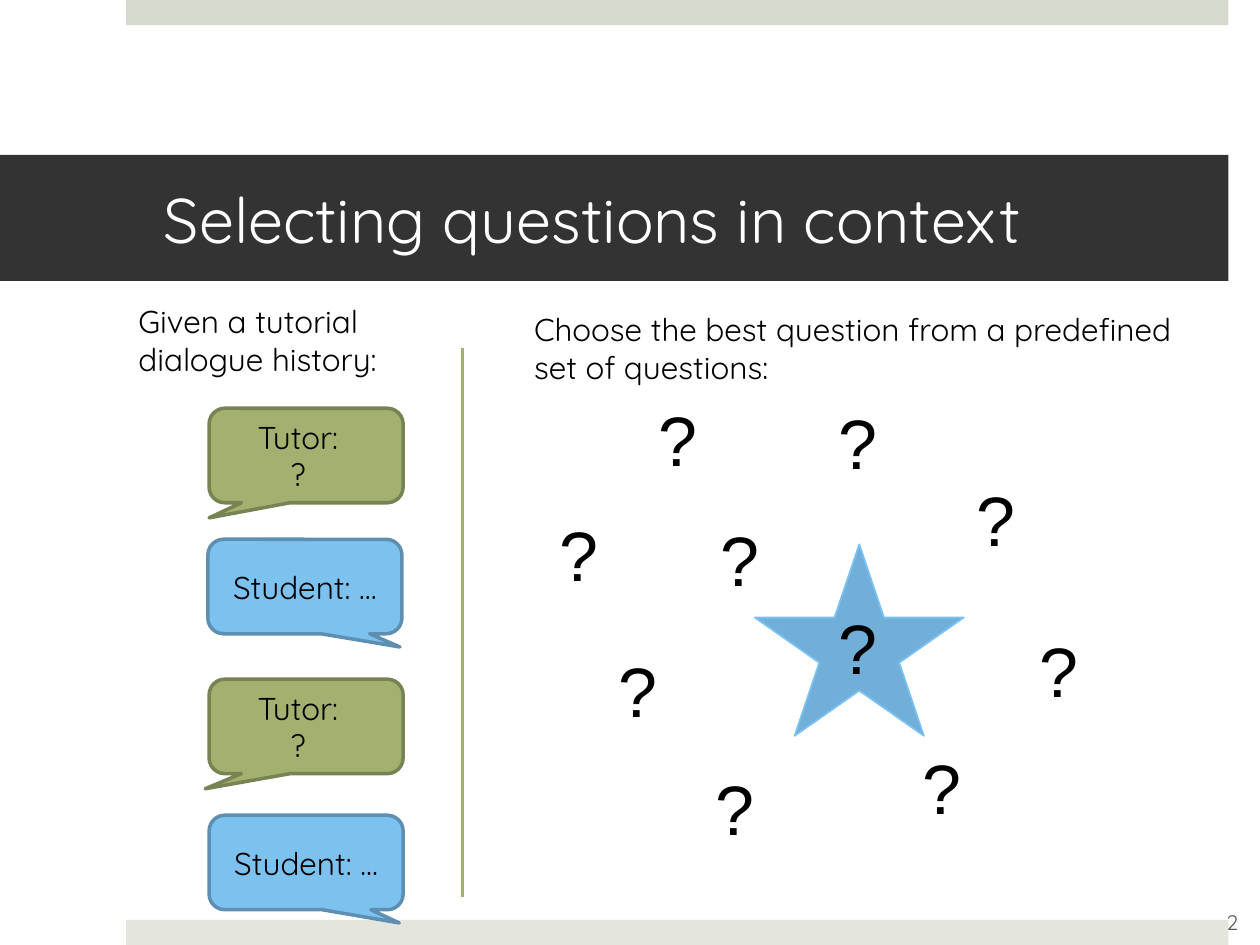
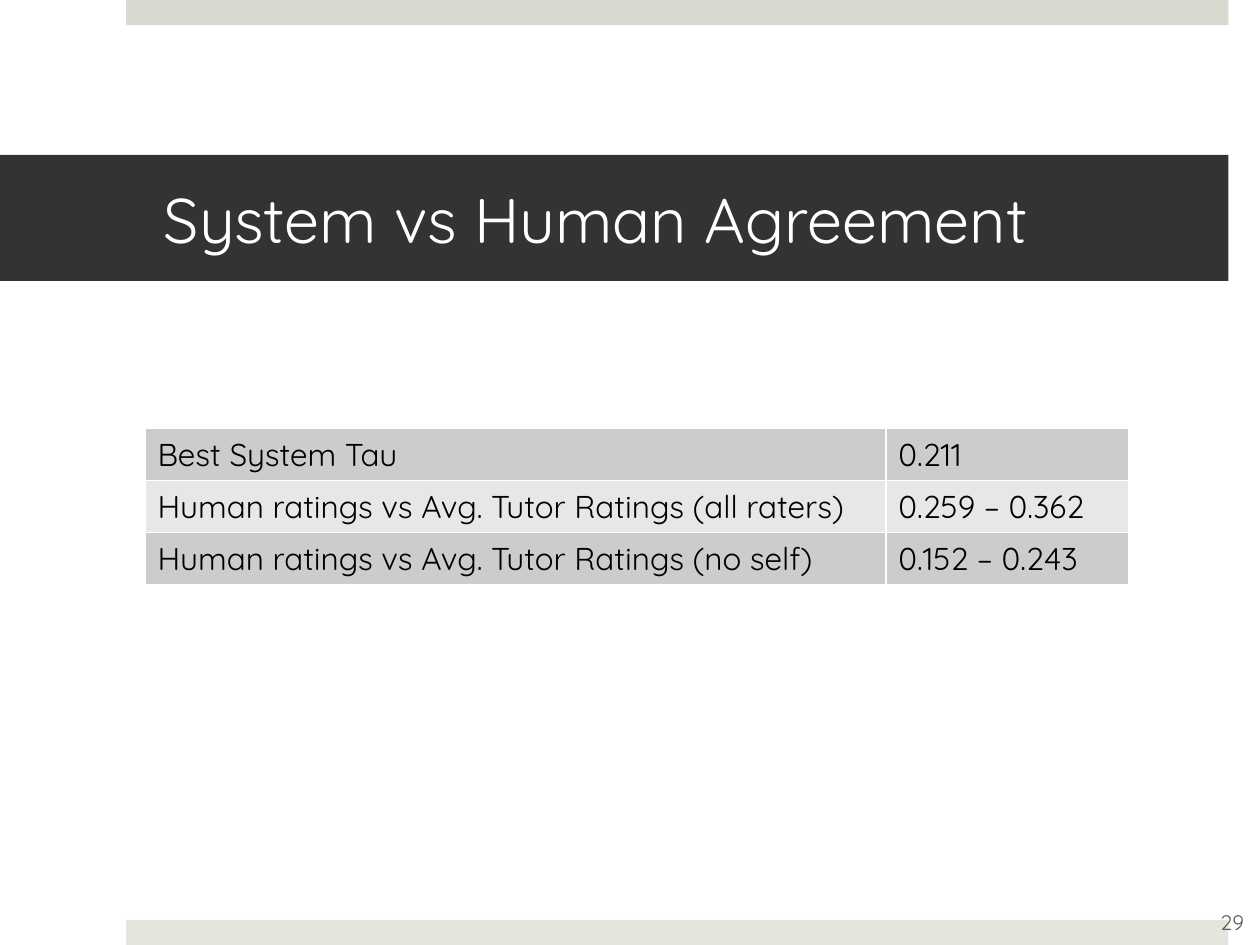
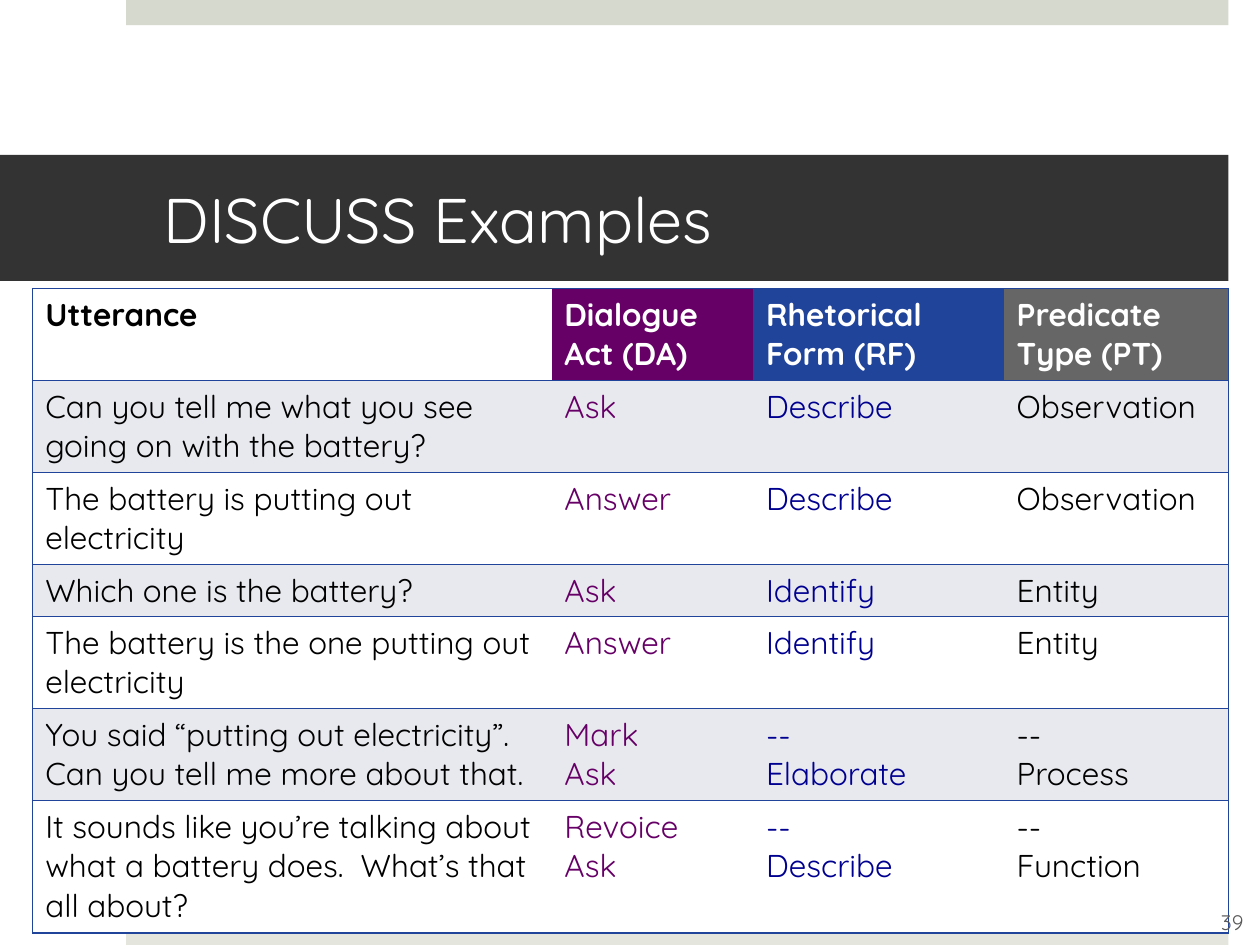
"""Builds three slides on question selection in tutorial dialogues."""
from dataclasses import dataclass

import pptx
import pptx.dml.color
import pptx.enum.shapes
import pptx.enum.text
import pptx.oxml
import pptx.oxml.ns
import pptx.util

Inches = pptx.util.Inches
Pt = pptx.util.Pt
SHAPE = pptx.enum.shapes.MSO_SHAPE
ALIGN = pptx.enum.text.PP_ALIGN
ANCHOR = pptx.enum.text.MSO_ANCHOR

FONT = "Quicksand"
COLORS = {
    "white": "FFFFFF", "black": "000000", "title": "333333",
    "top": "D6D9CD", "bottom": "E4E6DE", "number": "595959",
    "tutor": "A2B170", "tutor_line": "788353",
    "student": "7DC1EF", "student_line": "5C8FB1",
    "star": "71AFD9", "star_line": "7AC2F2",
    "dark_row": "CCCCCC", "light_row": "E7E7E7", "tint_row": "E8E9EF",
    "act": "660066", "form": "21449B", "type": "666666", "form_text": "000090",
}


@dataclass
class Box:
    """Position and size in inches."""
    x: float
    y: float
    w: float
    h: float

    def emu(self) -> list:
        """Return the four lengths as Inches."""
        return [Inches(v) for v in (self.x, self.y, self.w, self.h)]


@dataclass
class Callout:
    """One speech bubble of the dialogue history."""
    speaker: str
    text: str
    x: float
    y: float
    tip: tuple[float, float]


@dataclass
class CellStyle:
    """Look of one table cell."""
    fill: str
    color: str = "black"
    bold: bool = False


CALLOUTS = [
    Callout("tutor", "Tutor:\n?", 1.66, 3.24, (-0.5, 0.66)),
    Callout("student", "Student: …", 1.65, 4.28, (0.49, 0.64)),
    Callout("tutor", "Tutor:\n?", 1.66, 5.39, (-0.52, 0.66)),
    Callout("student", "Student: …", 1.66, 6.47, (0.48, 0.64)),
]
QUESTION_SPOTS = [
    (4.34, 4.01), (5.13, 3.1), (5.62, 4.05), (5.58, 6.03), (4.81, 5.09),
    (6.56, 3.12), (6.56, 4.75), (7.65, 3.73), (7.22, 5.86), (8.15, 4.93),
]
AGREEMENT = [
    ("Best System Tau", "0.211"),
    ("Human ratings vs Avg. Tutor Ratings (all raters)", "0.259 – 0.362"),
    ("Human ratings vs Avg. Tutor Ratings (no self)", "0.152 – 0.243"),
]
EXAMPLES = [
    ("Utterance", "Dialogue Act (DA)", "Rhetorical Form (RF)", "Predicate Type (PT)"),
    ("Can you tell me what you see going on with the battery?",
     "Ask", "Describe", "Observation"),
    ("The battery is putting out electricity", "Answer", "Describe", "Observation"),
    ("Which one is the battery?", "Ask", "Identify", "Entity"),
    ("The battery is the one putting out electricity", "Answer", "Identify", "Entity"),
    ("You said “putting out electricity”.  Can you tell me more about that.",
     "Mark\nAsk", "--\nElaborate", "--\nProcess"),
    ("It sounds like you’re talking about what a battery does.  What’s that all about?",
     "Revoice\nAsk", "--\nDescribe", "--\nFunction"),
]
EXAMPLE_LINES = [2, 2, 2, 1, 2, 2, 3]
HEADER_STYLES = [CellStyle("white", bold=True)] + [
    CellStyle(name, "white", True) for name in ("act", "form", "type")]
COLUMN_COLORS = ["black", "act", "form_text", "black"]


def rgb(name: str) -> pptx.dml.color.RGBColor:
    """Look a colour up by name."""
    return pptx.dml.color.RGBColor.from_string(COLORS[name])


def write(tf, text: str, size: float = 18, color: str = "black",
          align=ALIGN.LEFT, bold: bool = False, font: str = FONT) -> None:
    """Set the text of a frame and format its runs."""
    tf.text = text
    tf.word_wrap = True
    for p in tf.paragraphs:
        p.alignment = align
        for r in p.runs:
            r.font.name = font
            r.font.size = Pt(size)
            r.font.bold = bold
            r.font.color.rgb = rgb(color)


def add_shape(s, kind, box: Box, fill: str, line: str = "", width: float = 1):
    """Draw a flat preset shape, outlined if a line colour is given."""
    sp = s.shapes.add_shape(kind, *box.emu())
    sp.shadow.inherit = False
    sp.fill.solid()
    sp.fill.fore_color.rgb = rgb(fill)
    if line:
        sp.line.color.rgb = rgb(line)
        sp.line.width = Pt(width)
    else:
        sp.line.fill.background()
    return sp


def add_text(s, box: Box, text: str, **style):
    """Add a text box and return its frame."""
    tf = s.shapes.add_textbox(*box.emu()).text_frame
    write(tf, text, **style)
    return tf


def add_slide(prs, title: str):
    """Add a slide with the shared bands and title."""
    s = prs.slides.add_slide(prs.slide_layouts[6])
    add_shape(s, SHAPE.RECTANGLE, Box(1, 0, 8.75, 0.2), "top")
    add_shape(s, SHAPE.RECTANGLE, Box(1, 7.3, 8.75, 0.2), "bottom")
    tf = add_shape(s, SHAPE.RECTANGLE, Box(0, 1.23, 9.75, 1), "title").text_frame
    tf.margin_left, tf.margin_right = Inches(1.3), Inches(0.3)
    tf.vertical_anchor = ANCHOR.MIDDLE
    write(tf, title, 36, "white")
    return s


def add_number(s, number: int) -> None:
    """Write the slide number in the lower right corner."""
    tf = add_text(s, Box(9.53, 7.12, 0.5, 0.4), str(number),
                  size=12, color="number", align=ALIGN.CENTER)
    tf.vertical_anchor = ANCHOR.MIDDLE


def add_callout(s, c: Callout) -> None:
    """Draw one speech bubble."""
    sp = add_shape(s, SHAPE.ROUNDED_RECTANGULAR_CALLOUT, Box(c.x, c.y, 1.54, 0.75),
                   c.speaker, c.speaker + "_line", 2)
    sp.adjustments[0], sp.adjustments[1] = c.tip
    tf = sp.text_frame
    tf.vertical_anchor = ANCHOR.MIDDLE
    write(tf, c.text, align=ALIGN.CENTER)
    if c.speaker == "tutor":
        pPr = tf.paragraphs[0]._p.get_or_add_pPr()
        pPr.set("marR", str(Inches(0.13)))


def set_borders(cell, sides: str, color: str) -> None:
    """Draw the named sides (of L, R, T, B) and clear the others."""
    tcPr = cell._tc.get_or_add_tcPr()
    ns = pptx.oxml.ns.nsdecls("a")
    for side in "LRTB":
        paint = "<a:noFill/>"
        if side in sides:
            paint = f'<a:solidFill><a:srgbClr val="{COLORS[color]}"/></a:solidFill>'
        tcPr.append(pptx.oxml.parse_xml(
            f'<a:ln{side} {ns} w="{Pt(1)}">{paint}</a:ln{side}>'))


def add_table(s, x: float, y: float, widths: list[float], heights: list[float],
              rows: list[tuple], style_of, sides_of, border: str) -> None:
    """Add a table whose looks follow from row and column."""
    box = Box(x, y, sum(widths), sum(heights))
    tbl = s.shapes.add_table(len(rows), len(widths), *box.emu()).table
    tbl.first_row = tbl.horz_banding = False
    for col, w in zip(tbl.columns, widths):
        col.width = Inches(w)
    for row, h in zip(tbl.rows, heights):
        row.height = Inches(h)
    for i, texts in enumerate(rows):
        for j, text in enumerate(texts):
            cell, style = tbl.cell(i, j), style_of(i, j)
            set_borders(cell, sides_of(j), border)
            cell.fill.solid()
            cell.fill.fore_color.rgb = rgb(style.fill)
            write(cell.text_frame, text, color=style.color, bold=style.bold)


def example_style(i: int, j: int) -> CellStyle:
    """Style of a cell in the examples table."""
    if i == 0:
        return HEADER_STYLES[j]
    return CellStyle("tint_row" if i % 2 else "white", COLUMN_COLORS[j])


def example_sides(j: int) -> str:
    """Bordered sides of a cell in the examples table."""
    return "TB" + {0: "L", 3: "R"}.get(j, "")


def build_selecting(prs) -> None:
    """Build the slide on selecting questions."""
    s = add_slide(prs, "Selecting questions in context")
    cx = s.shapes.add_connector(pptx.enum.shapes.MSO_CONNECTOR.STRAIGHT,
                                Inches(3.67), Inches(2.76), Inches(3.67), Inches(7.12))
    cx.line.color.rgb = rgb("tutor")
    cx.line.width = Pt(2)
    cx._element.spPr.append(pptx.oxml.parse_xml(
        f'<a:effectLst {pptx.oxml.ns.nsdecls("a")}/>'))
    for c in CALLOUTS:
        add_callout(s, c)
    add_text(s, Box(1, 2.35, 2.2, 0.71), "Given a tutorial\ndialogue history:")
    add_shape(s, SHAPE.STAR_5_POINT, Box(5.99, 4.32, 1.66, 1.52), "star", "star_line")
    add_text(s, Box(4.14, 2.41, 5.61, 0.71),
             "Choose the best question from a predefined\nset of questions:")
    for x, y in QUESTION_SPOTS:
        tf = add_text(s, Box(x, y, 0.51, 0.77), "?", size=40, font="Arial")
        tf.word_wrap = False
    add_number(s, 2)


def build_agreement(prs) -> None:
    """Build the slide on agreement."""
    s = add_slide(prs, "System vs Human Agreement")
    add_table(s, 1.15, 3.4, [5.88, 1.93], [0.41] * 3, AGREEMENT,
              lambda i, j: CellStyle("light_row" if i % 2 else "dark_row"),
              lambda j: "LRTB", "white")
    add_number(s, 29)


def build_examples(prs) -> None:
    """Build the slide of annotated examples."""
    s = add_slide(prs, "DISCUSS Examples")
    heights = [0.41 + 0.32 * (n - 1) for n in EXAMPLE_LINES]
    add_table(s, 0.26, 2.29, [4.12, 1.6, 1.99, 1.78], heights, EXAMPLES,
              example_style, example_sides, "form")
    add_number(s, 39)


def main() -> None:
    """Build and save the deck."""
    prs = pptx.Presentation()
    prs.slide_width, prs.slide_height = Inches(10), Inches(7.5)
    build_selecting(prs)
    build_agreement(prs)
    build_examples(prs)
    prs.save("out.pptx")


if __name__ == "__main__":
    main()
